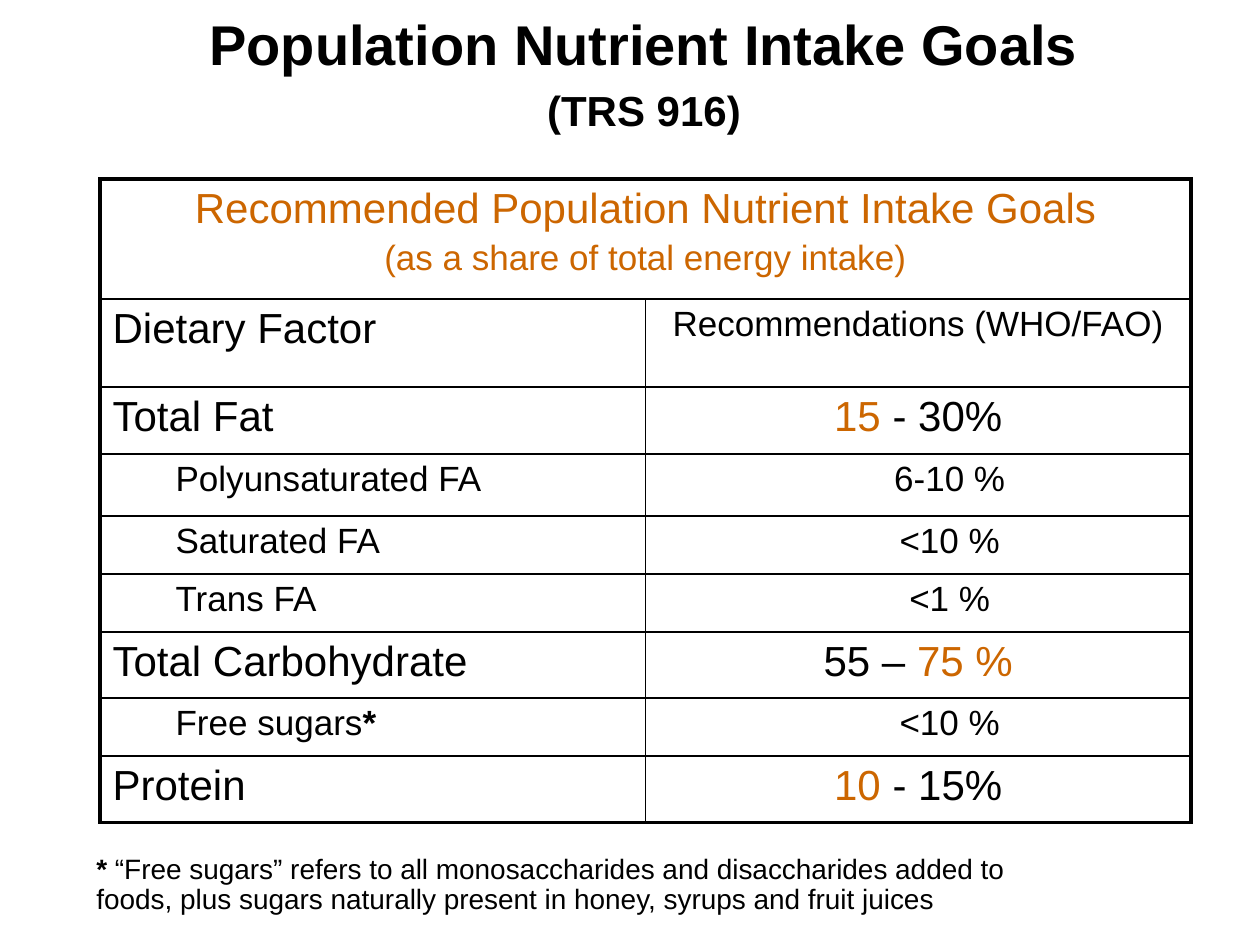
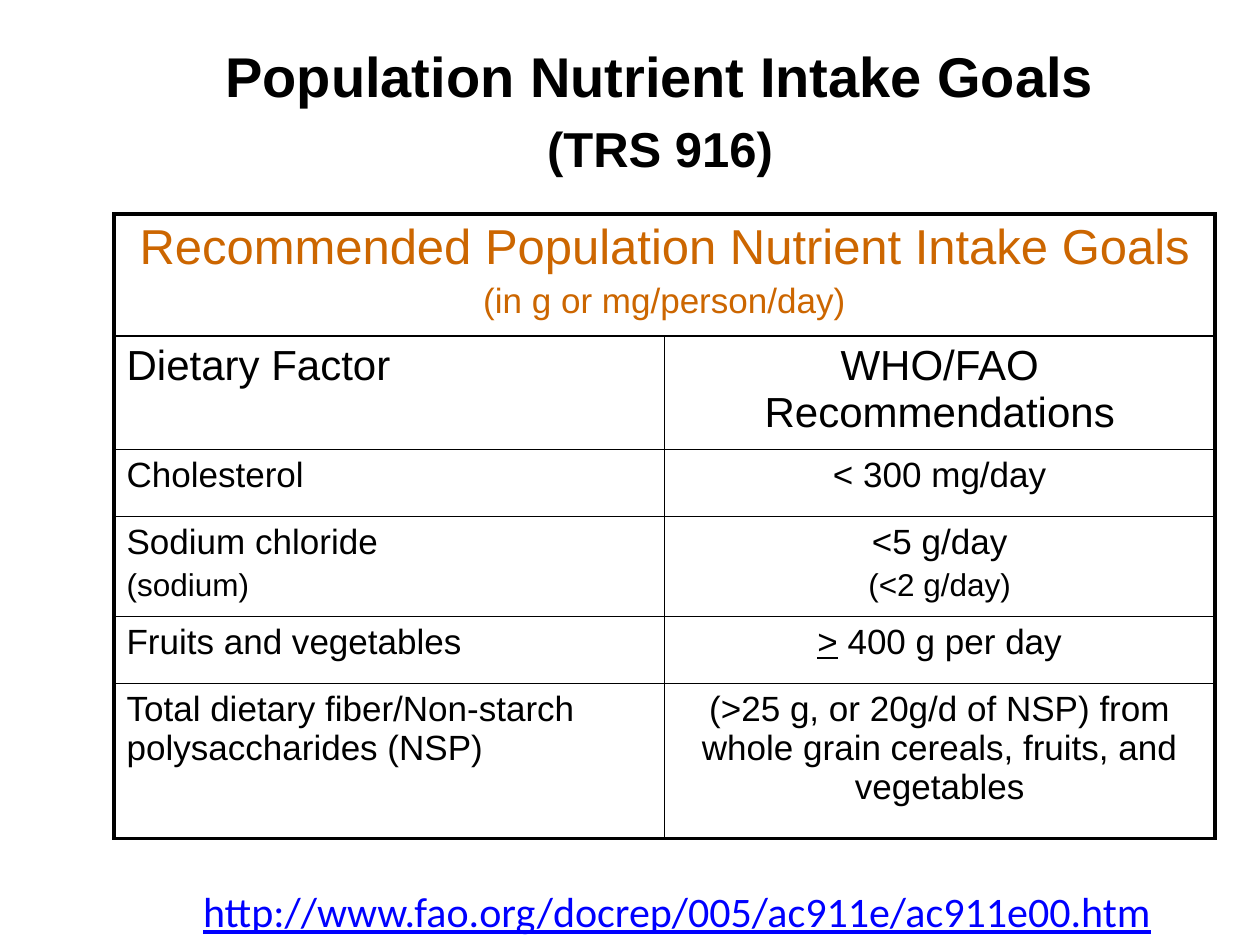
from dataclasses import dataclass

from lxml import etree
from pptx import Presentation
from pptx import util as u
from pptx.dml.color import RGBColor
from pptx.enum import text
from pptx.oxml import ns

SCALE = 914400 / 126


@dataclass(frozen=True)
class Theme:
    font: str = "Arial"
    link_font: str = "Calibri"
    ink: str = "000000"
    paper: str = "FFFFFF"
    accent: str = "CC6600"
    link: str = "0000FF"
    title: int = 32
    large: int = 28
    head: int = 24
    body: int = 20
    small: int = 18
    note: int = 16
    thick: float = 2.25
    thin: float = 1
    gap: float = 0.2
    indent: int = 63


T = Theme()


@dataclass(frozen=True)
class Bit:
    words: str
    size: int = T.body
    tint: str = T.ink
    bold: bool = False
    under: bool = False
    font: str = T.font


def px(count):
    return u.Emu(round(count * SCALE))


def write(frame, lines, center=False, deep=False, pitch=None, gap=T.gap):
    for spot, line in enumerate(lines):
        bits = line if isinstance(line, list) else [line]
        para = frame.paragraphs[0] if spot == 0 else frame.add_paragraph()
        para.alignment = text.PP_ALIGN.CENTER if center else text.PP_ALIGN.LEFT
        para.space_before = u.Pt(bits[0].size * gap)
        if pitch:
            para.line_spacing = pitch
        if deep:
            para.level = 1
            props = para._p.get_or_add_pPr()
            props.set("marL", str(px(T.indent)))
            props.set("indent", "0")
        for bit in bits:
            run = para.add_run()
            run.text = bit.words
            run.font.name = bit.font
            run.font.size = u.Pt(bit.size)
            run.font.bold = bit.bold
            run.font.underline = bit.under
            run.font.color.rgb = RGBColor.from_string(bit.tint)


def add_text(slide, box, lines, middle=False, **style):
    frame = slide.shapes.add_textbox(*map(px, box)).text_frame
    frame.word_wrap = True
    if middle:
        frame.vertical_anchor = text.MSO_ANCHOR.MIDDLE
    write(frame, lines, **style)


def add_title(slide, box, size):
    lines = [Bit("Population Nutrient Intake Goals", T.title, bold=True),
             Bit("(TRS 916)", size, bold=True)]
    add_text(slide, box, lines, center=True)


def rule(cell, edges):
    props = cell._tc.get_or_add_tcPr()
    for spot, (side, width) in enumerate(edges.items()):
        line = etree.Element(ns.qn(f"a:ln{side}"), w=str(u.Pt(width)))
        fill = etree.SubElement(line, ns.qn("a:solidFill"))
        etree.SubElement(fill, ns.qn("a:srgbClr"), val=T.ink)
        props.insert(spot, line)


def add_goals(slide, box, heights, head, rows):
    left, top, width = box
    count = len(heights)
    frame = slide.shapes.add_table(
        count, 2, *map(px, (left, top, width, sum(heights))))
    table = frame.table
    table.first_row = table.horz_banding = False
    for col in table.columns:
        col.width = px(width / 2)
    for row, height in zip(table.rows, heights):
        row.height = px(height)
    for r in range(count):
        for c in range(2):
            cell = table.cell(r, c)
            cell.fill.solid()
            cell.fill.fore_color.rgb = RGBColor.from_string(T.paper)
            outer = {"L": c == 0, "R": c == 1 or r == 0,
                     "T": r == 0, "B": r == count - 1}
            rule(cell, {side: T.thick if edge else T.thin
                        for side, edge in outer.items()})
    table.cell(0, 0).merge(table.cell(0, 1))
    write(table.cell(0, 0).text_frame, head, center=True)
    for r, (name, goal, deep) in enumerate(rows, 1):
        write(table.cell(r, 0).text_frame, name, deep=deep)
        write(table.cell(r, 1).text_frame, goal, center=True, deep=deep)


def main_row(name, *goal):
    return [Bit(name, T.head)], [list(goal)], False


def sub_row(name, goal, mark=""):
    bits = [Bit(name)] + ([Bit(mark, bold=True)] if mark else [])
    return [bits], [Bit(goal)], True


def plain_row(name, goal):
    return [Bit(name)], [Bit(goal)], False


def share_slide(slide):
    head = [Bit("Recommended Population Nutrient Intake Goals", T.head, T.accent),
            Bit("(as a share of total energy intake)", tint=T.accent)]
    rows = [
        main_row("Dietary Factor", Bit("Recommendations (WHO/FAO)")),
        main_row("Total Fat", Bit("15 ", T.head, T.accent), Bit("- 30%", T.head)),
        sub_row("Polyunsaturated FA", "6-10 %"),
        sub_row("Saturated FA", "<10 %"),
        sub_row("Trans FA", "<1 %"),
        main_row("Total Carbohydrate", Bit("55 – ", T.head),
                 Bit("75 %", T.head, T.accent)),
        sub_row("Free sugars", "<10 %", "*"),
        main_row("Protein", Bit("10 ", T.head, T.accent), Bit("- 15%", T.head)),
    ]
    add_goals(slide, (100, 179, 1091),
              [120, 88, 67, 62, 58, 58, 66, 58, 67], head, rows)
    note = [Bit("*", T.note, bold=True),
            Bit(" “Free sugars” refers to all monosaccharides and disaccharides "
                "added to foods, plus sugars naturally present in honey, syrups "
                "and fruit juices", T.note)]
    add_text(slide, (84, 849, 953, 73), [note], pitch=0.9)
    add_title(slide, (64, 3, 1160, 141), T.head)


def amount_slide(slide):
    head = [Bit("Recommended Population Nutrient Intake Goals", T.large, T.accent),
            Bit("(in g or mg/person/day)", tint=T.accent)]
    rows = [
        main_row("Dietary Factor", Bit("WHO/FAO Recommendations", T.head)),
        plain_row("Cholesterol", "< 300 mg/day"),
        ([Bit("Sodium chloride"), Bit("(sodium)", T.small)],
         [Bit("<5 g/day"), Bit("(<2 g/day)", T.small)], False),
        ([Bit("Fruits and vegetables")],
         [[Bit(">", under=True), Bit(" 400 g per day")]], False),
        plain_row("Total dietary fiber/Non-starch polysaccharides (NSP)",
                  "(>25 g, or 20g/d of NSP) from whole grain cereals, fruits, "
                  "and vegetables"),
    ]
    site = Bit("http://www.fao.org/docrep/005/ac911e/ac911e00.htm",
               T.head, T.link, under=True, font=T.link_font)
    add_text(slide, (94, 877, 1166, 68), [site], center=True, middle=True, gap=0)
    add_goals(slide, (114, 214, 1101), [122, 113, 67, 100, 67, 155], head, rows)
    add_title(slide, (154, 35, 1012, 151), T.large)


def main():
    deck = Presentation()
    deck.slide_width, deck.slide_height = px(1260), px(945)
    for build in (share_slide, amount_slide):
        build(deck.slides.add_slide(deck.slide_layouts[6]))
    deck.save("out.pptx")


if __name__ == "__main__":
    main()
